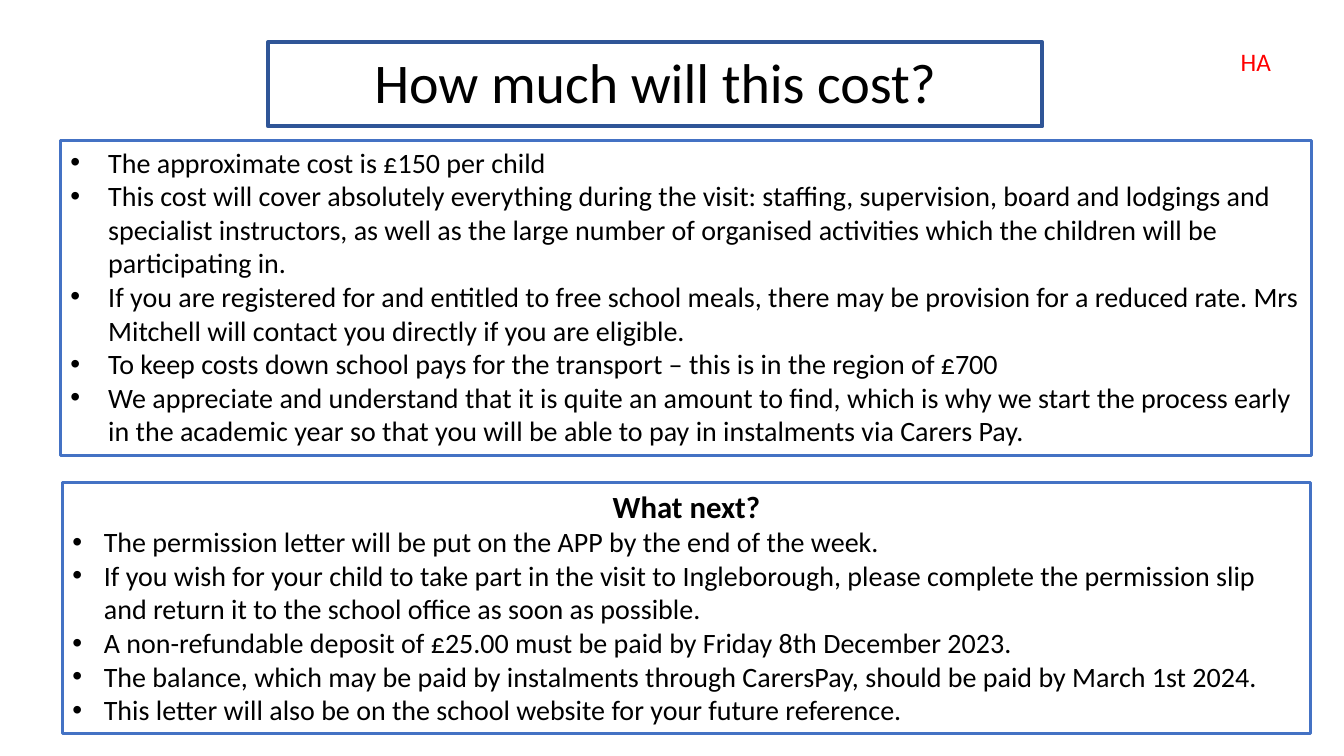
"""Build the slide on the cost of the visit and what happens next."""
from pptx import Presentation
from pptx.dml.color import RGBColor
from pptx.enum import text
from pptx.oxml.ns import qn
from pptx.util import Pt

BLACK = RGBColor(0x00, 0x00, 0x00)
WHITE = RGBColor(0xFF, 0xFF, 0xFF)
RED = RGBColor(0xFF, 0x00, 0x00)
BLUE = RGBColor(0x44, 0x72, 0xC4)
DARK_BLUE = RGBColor(0x2F, 0x55, 0x97)
FONT = "Calibri"

TITLE = "How much will this cost?"
INITIALS = "HA"
PANELS = [
    {
        "place": (43.2, 100.1, 893.5, 225.4),
        "indent": 27,
        "heading": None,
        "points": [
            "The approximate cost is £150 per child",
            "This cost will cover absolutely everything during the visit: staffing, "
            "supervision, board and lodgings and specialist instructors, as well as the "
            "large number of organised activities which the children will be participating in.",
            "If you are registered for and entitled to free school meals, there may be "
            "provision for a reduced rate. Mrs Mitchell will contact you directly if you "
            "are eligible.",
            "To keep costs down school pays for the transport – this is in the region of £700",
            "We appreciate and understand that it is quite an amount to find, which is why "
            "we start the process early in the academic year so that you will be able to "
            "pay in instalments via Carers Pay.",
        ],
    },
    {
        "place": (44.6, 344.9, 891.4, 179.3),
        "indent": 22.5,
        "heading": "What next?",
        "points": [
            "The permission letter will be put on the APP by the end of the week.",
            "If you wish for your child to take part in the visit to Ingleborough, please "
            "complete the permission slip and return it to the school office as soon as possible.",
            "A non-refundable deposit of £25.00 must be paid by Friday 8th December 2023.",
            "The balance, which may be paid by instalments through CarersPay, should be "
            "paid by March 1st 2024.",
            "This letter will also be on the school website for your future reference.",
        ],
    },
]


def place(box, left, top, width, height):
    box.left, box.top, box.width, box.height = map(Pt, (left, top, width, height))
    frame = box.text_frame
    frame.word_wrap = True
    frame.auto_size = text.MSO_AUTO_SIZE.SHAPE_TO_FIT_TEXT
    frame.vertical_anchor = text.MSO_ANCHOR.TOP
    return frame


def outline(box, color, width):
    box.fill.solid()
    box.fill.fore_color.rgb = WHITE
    box.line.color.rgb = color
    box.line.width = Pt(width)


def write(paragraph, words, size, color=BLACK, bold=False, align=text.PP_ALIGN.LEFT):
    paragraph.alignment = align
    run = paragraph.add_run()
    run.text = words
    run.font.name = FONT
    run.font.size = Pt(size)
    run.font.bold = bold
    run.font.color.rgb = color


def add_bullet(paragraph, indent):
    properties = paragraph._p.get_or_add_pPr()
    properties.set("marL", str(Pt(indent)))
    properties.set("indent", str(-Pt(indent)))
    font = properties.makeelement(qn("a:buFont"), {"typeface": "Arial"})
    mark = properties.makeelement(qn("a:buChar"), {"char": "•"})
    properties.extend([font, mark])


def add_panel(slide, panel):
    box = slide.shapes.add_textbox(0, 0, 0, 0)
    frame = place(box, *panel["place"])
    outline(box, BLUE, 2.25)
    paragraph = frame.paragraphs[0]
    if panel["heading"]:
        write(paragraph, panel["heading"], 22, bold=True, align=text.PP_ALIGN.CENTER)
        paragraph = frame.add_paragraph()
    for number, point in enumerate(panel["points"]):
        if number:
            paragraph = frame.add_paragraph()
        write(paragraph, point, 20)
        add_bullet(paragraph, panel["indent"])


def main():
    deck = Presentation()
    deck.slide_width, deck.slide_height = Pt(960), Pt(540)
    slide = deck.slides.add_slide(deck.slide_layouts[5])

    title = slide.shapes.title
    frame = place(title, 191.5, 30.2, 553, 55.4)
    outline(title, DARK_BLUE, 3)
    write(frame.paragraphs[0], TITLE, 40, align=text.PP_ALIGN.CENTER)

    for panel in PANELS:
        add_panel(slide, panel)

    initials = slide.shapes.add_textbox(0, 0, 0, 0)
    frame = place(initials, 879.1, 29.5, 51.8, 29)
    write(frame.paragraphs[0], INITIALS, 18, RED)

    deck.save("out.pptx")


if __name__ == "__main__":
    main()
